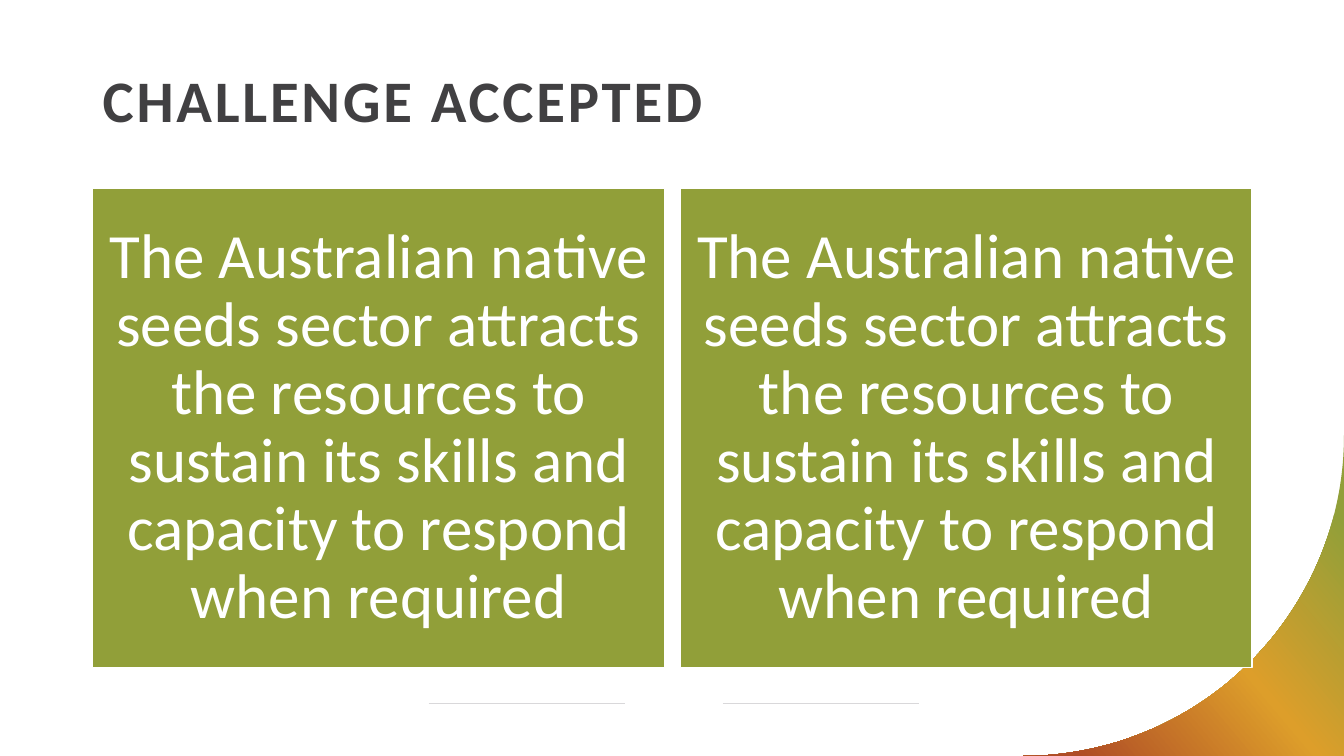
from math import cos, pi, sin

from lxml import etree
from pptx import Presentation
from pptx.dml.color import RGBColor
from pptx.enum.shapes import MSO_CONNECTOR, MSO_SHAPE
from pptx.enum.text import MSO_ANCHOR, PP_ALIGN
from pptx.oxml.ns import qn
from pptx.util import Inches, Pt

RECTANGLE = MSO_SHAPE.RECTANGLE
STRAIGHT = MSO_CONNECTOR.STRAIGHT
TOP, MIDDLE = MSO_ANCHOR.TOP, MSO_ANCHOR.MIDDLE
LEFT, CENTER = PP_ALIGN.LEFT, PP_ALIGN.CENTER

# Content
TITLE = "CHALLENGE ACCEPTED"
STATEMENT = ("The Australian native seeds sector attracts the resources to "
             "sustain its skills and capacity to respond when required")
PANELS = [STATEMENT, STATEMENT]

# Colours
WHITE = RGBColor(0xFF, 0xFF, 0xFF)
CHARCOAL = RGBColor(0x41, 0x40, 0x42)
RULE_GREY = RGBColor(0xD9, 0xD8, 0xDA)
OLIVE = RGBColor(0x91, 0x9F, 0x39)
AMBER = RGBColor(0xDD, 0x9E, 0x2A)
RUST = RGBColor(0xAF, 0x4C, 0x26)
CORNER_STOPS = [(12, OLIVE), (50, AMBER), (91, RUST)]
CORNER_ANGLE = 140

# Layout, in inches
SLIDE_W, SLIDE_H = 13.33, 7.5
MARGIN = 0.92
PANEL_TOP, PANEL_W, PANEL_H, PANEL_GAP = 1.87, 5.67, 4.75, 0.16
RULE_Y, RULE_W, RULE_LEFTS = 6.98, 1.95, (4.25, 7.17)
CORNER_RADIUS, CORNER_STEPS = 3.18, 90


def set_text(frame, text, size, color, align, anchor, bold=False):
    frame.word_wrap = True
    frame.vertical_anchor = anchor
    frame.text = text
    paragraph = frame.paragraphs[0]
    paragraph.alignment = align
    paragraph.line_spacing = 0.9
    run = paragraph.runs[0]
    run.font.name = "Calibri"
    run.font.size = Pt(size)
    run.font.bold = bold
    run.font.color.rgb = color
    return run


prs = Presentation()
prs.slide_width, prs.slide_height = Inches(SLIDE_W), Inches(SLIDE_H)
slide = prs.slides.add_slide(prs.slide_layouts[6])
shapes = slide.shapes

# Footer rules
for left in RULE_LEFTS:
    rule = shapes.add_connector(STRAIGHT, Inches(left), Inches(RULE_Y),
                                Inches(left + RULE_W), Inches(RULE_Y))
    rule.line.color.rgb = RULE_GREY
    rule.line.width = Pt(0.5)
    etree.SubElement(rule._element.spPr, qn("a:effectLst"))

# Corner: the area outside a quarter circle
center_x, center_y = SLIDE_W - CORNER_RADIUS, SLIDE_H - CORNER_RADIUS
angles = [pi / 2 * step / CORNER_STEPS for step in range(CORNER_STEPS + 1)]
arc = [(Inches(center_x + CORNER_RADIUS * cos(a)),
        Inches(center_y + CORNER_RADIUS * sin(a))) for a in angles]
outline = shapes.build_freeform(Inches(SLIDE_W), Inches(SLIDE_H))
outline.add_line_segments(arc, close=True)
corner = outline.convert_to_shape()
corner.shadow.inherit = False
corner.line.fill.background()
corner.fill.gradient()
gradient = corner._element.spPr.find(qn("a:gradFill"))
stops = gradient.find(qn("a:gsLst"))
for stop in list(stops):
    stops.remove(stop)
for percent, color in CORNER_STOPS:
    stop = etree.SubElement(stops, qn("a:gs"), pos=str(percent * 1000))
    etree.SubElement(stop, qn("a:srgbClr"), val=str(color))
gradient.find(qn("a:lin")).set("ang", str(CORNER_ANGLE * 60000))

# Title
title = shapes.add_textbox(Inches(MARGIN), Inches(0.66), Inches(11.5), Inches(1.02))
title_run = set_text(title.text_frame, TITLE, 42, CHARCOAL, LEFT, TOP, bold=True)
title_run.font._element.set("spc", "200")

# Panels
for index, statement in enumerate(PANELS):
    left = MARGIN + index * (PANEL_W + PANEL_GAP)
    panel = shapes.add_shape(RECTANGLE, Inches(left), Inches(PANEL_TOP),
                             Inches(PANEL_W), Inches(PANEL_H))
    panel.shadow.inherit = False
    panel.fill.solid()
    panel.fill.fore_color.rgb = OLIVE
    panel.line.color.rgb = WHITE
    panel.line.width = Pt(1)
    frame = panel.text_frame
    frame.margin_left = frame.margin_right = Inches(0.12)
    frame.margin_top = frame.margin_bottom = Inches(0.12)
    set_text(frame, statement, 45, WHITE, CENTER, MIDDLE)

prs.save("out.pptx")
